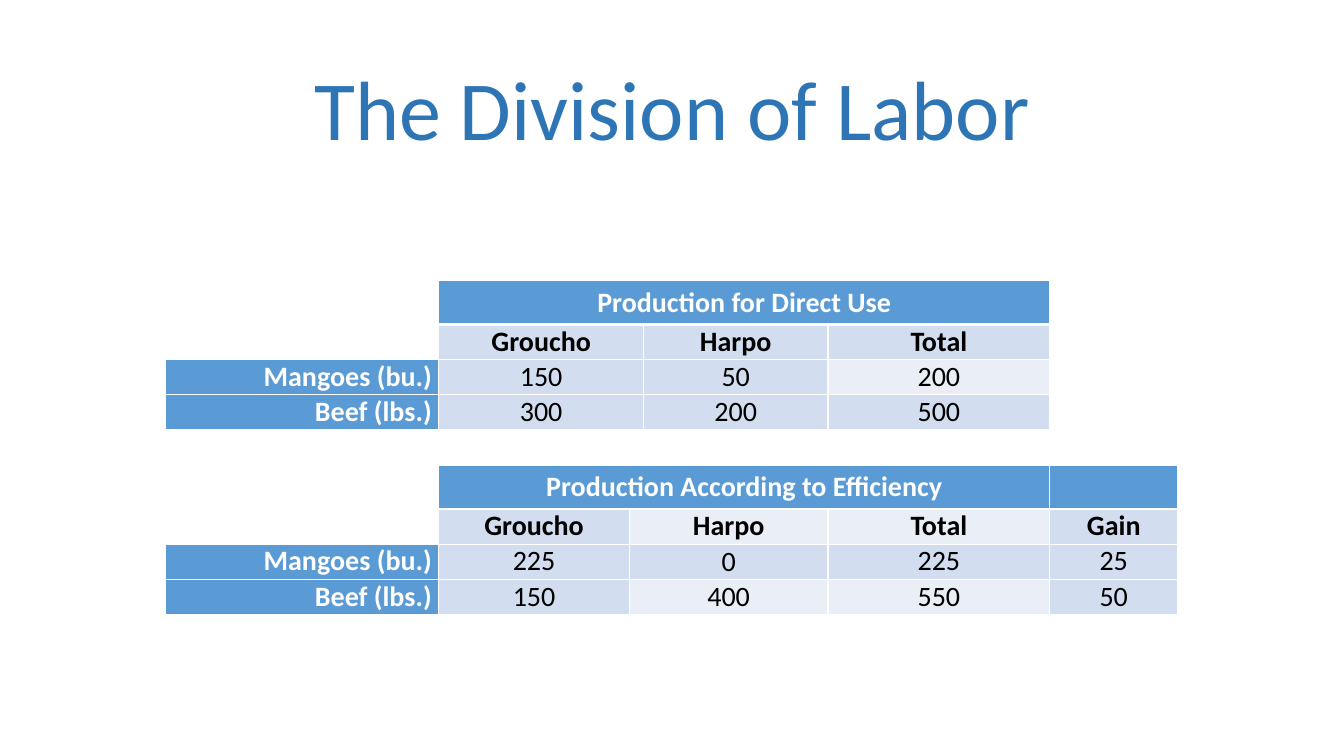
from dataclasses import dataclass

from lxml.etree import SubElement
from pptx import Presentation
from pptx.dml.color import RGBColor
from pptx.enum.text import MSO_ANCHOR, MSO_AUTO_SIZE, PP_ALIGN
from pptx.oxml.ns import qn
from pptx.slide import Slide
from pptx.table import Table, _Cell
from pptx.util import Pt


@dataclass(frozen=True)
class Theme:
    font: str = "Calibri"
    title: str = "2E75B6"
    blue: str = "5B9BD5"
    band: str = "D2DEEF"
    pale: str = "EAEFF7"
    white: str = "FFFFFF"
    black: str = "000000"
    title_size: int = 60
    text_size: int = 20


THEME = Theme()


@dataclass(frozen=True)
class Look:
    fill: str
    ink: str
    bold: bool = True
    align: PP_ALIGN = PP_ALIGN.CENTER
    middle: bool = False  # centre wide cells vertically


@dataclass(frozen=True)
class Entry:
    text: str
    look: Look
    span: int = 1


BLANK = Look(THEME.white, THEME.black)
HEAD = Look(THEME.blue, THEME.white, middle=True)
LABEL = Look(THEME.blue, THEME.white, align=PP_ALIGN.RIGHT)
NAME = Look(THEME.band, THEME.black)
PALE_NAME = Look(THEME.pale, THEME.black)
VALUE = Look(THEME.band, THEME.black, bold=False, middle=True)
PALE = Look(THEME.pale, THEME.black, bold=False, middle=True)

GAP = Entry("", BLANK)
MANGO = Entry("Mangoes (bu.)", LABEL)
BEEF = Entry("Beef (lbs.)", LABEL)

WIDTHS = (195.1, 136.1, 10.1, 131.8, 158.4, 91.4)
TALL, LOW = 31.5, 25.1
ROWS: list[list[Entry]] = [
    # Direct use
    [GAP, Entry("Production for Direct Use", HEAD, 4), GAP],
    [GAP, Entry("Groucho", NAME, 2), Entry("Harpo", NAME), Entry("Total", NAME), GAP],
    [MANGO, Entry("150", VALUE, 2), Entry("50", VALUE), Entry("200", PALE), GAP],
    [BEEF, Entry("300", VALUE, 2), Entry("200", VALUE), Entry("500", VALUE), GAP],
    [GAP, Entry("", BLANK, 2), GAP, GAP, GAP],
    # Efficient use
    [GAP, Entry("Production According to Efficiency", HEAD, 4), Entry("", HEAD)],
    [GAP, Entry("Groucho", NAME), Entry("Harpo", PALE_NAME, 2),
     Entry("Total", PALE_NAME), Entry("Gain", NAME)],
    [MANGO, Entry("225", VALUE), Entry("0", VALUE, 2), Entry("225", VALUE), Entry("25", VALUE)],
    [BEEF, Entry("150", VALUE), Entry("400", PALE, 2), Entry("550", PALE), Entry("50", VALUE)],
]
HEIGHTS = [TALL if any(entry.look is HEAD for entry in row) else LOW for row in ROWS]


def set_edges(cell: _Cell, top: int, base: int) -> None:
    props = cell._tc.get_or_add_tcPr()
    for tag, width in (("lnL", 1), ("lnR", 1), ("lnT", top), ("lnB", base)):
        line = SubElement(props, qn(f"a:{tag}"), w=str(Pt(width)))
        fill = SubElement(line, qn("a:solidFill"))
        SubElement(fill, qn("a:srgbClr"), val=THEME.white)


def fill_cell(cell: _Cell, entry: Entry) -> None:
    look = entry.look
    cell.text = entry.text
    cell.margin_left = cell.margin_right = Pt(5)
    cell.margin_top = cell.margin_bottom = Pt(0)
    wide = look.middle and entry.span > 1
    cell.vertical_anchor = MSO_ANCHOR.MIDDLE if wide else MSO_ANCHOR.TOP
    para = cell.text_frame.paragraphs[0]
    para.alignment = look.align
    para.font.name = THEME.font
    para.font.size = Pt(THEME.text_size)
    para.font.bold = look.bold
    para.font.color.rgb = RGBColor.from_string(look.ink)


def draw_row(table: Table, index: int, entries: list[Entry]) -> None:
    col = 0
    for entry in entries:
        first = table.cell(index, col)
        if entry.span > 1:
            first.merge(table.cell(index, col + entry.span - 1))
        for place in range(col, col + entry.span):
            cell = table.cell(index, place)
            set_edges(cell, 3 if index == 1 else 1, 3 if index == 0 else 1)
            cell.fill.solid()
            cell.fill.fore_color.rgb = RGBColor.from_string(entry.look.fill)
        fill_cell(first, entry)
        col += entry.span


def draw_title(slide: Slide) -> None:
    title = slide.shapes.title
    title.left, title.top = Pt(66), Pt(28.8)
    title.width, title.height = Pt(828), Pt(104.4)
    frame = title.text_frame
    frame.text = "The Division of Labor"
    frame.word_wrap = True
    frame.auto_size = MSO_AUTO_SIZE.NONE
    frame.vertical_anchor = MSO_ANCHOR.MIDDLE
    para = frame.paragraphs[0]
    para.alignment = PP_ALIGN.CENTER
    para.line_spacing = 0.9
    para.font.name = THEME.font
    para.font.size = Pt(THEME.title_size)
    para.font.color.rgb = RGBColor.from_string(THEME.title)


def draw_table(slide: Slide) -> None:
    frame = slide.shapes.add_table(
        len(ROWS), len(WIDTHS), Pt(118.4), Pt(200.3), Pt(sum(WIDTHS)), Pt(sum(HEIGHTS)))
    table = frame.table
    table.first_row = table.horz_banding = False
    for column, width in zip(table.columns, WIDTHS):
        column.width = Pt(width)
    for row, height in zip(table.rows, HEIGHTS):
        row.height = Pt(height)
    for index, entries in enumerate(ROWS):
        draw_row(table, index, entries)


def main() -> None:
    deck = Presentation()
    deck.slide_width, deck.slide_height = Pt(960), Pt(540)
    slide = deck.slides.add_slide(deck.slide_layouts[5])
    draw_title(slide)
    draw_table(slide)
    deck.save("out.pptx")


if __name__ == "__main__":
    main()
